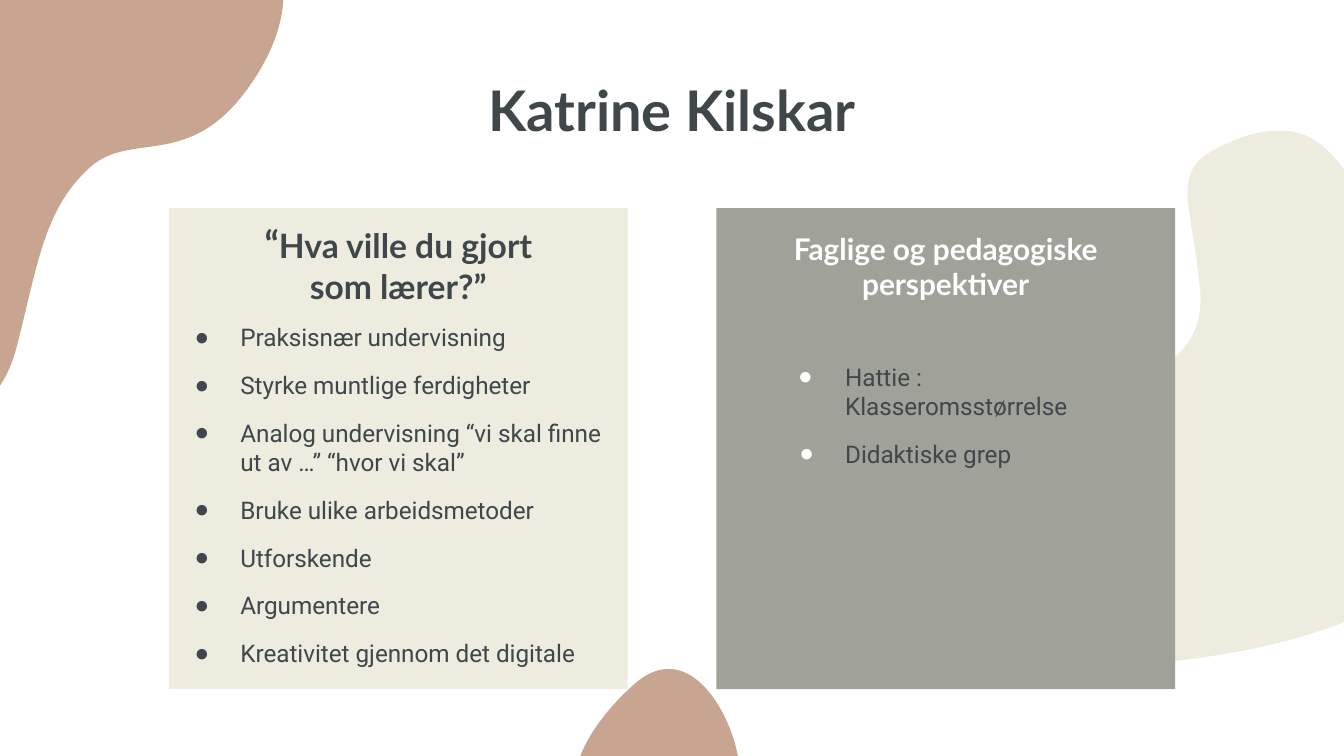
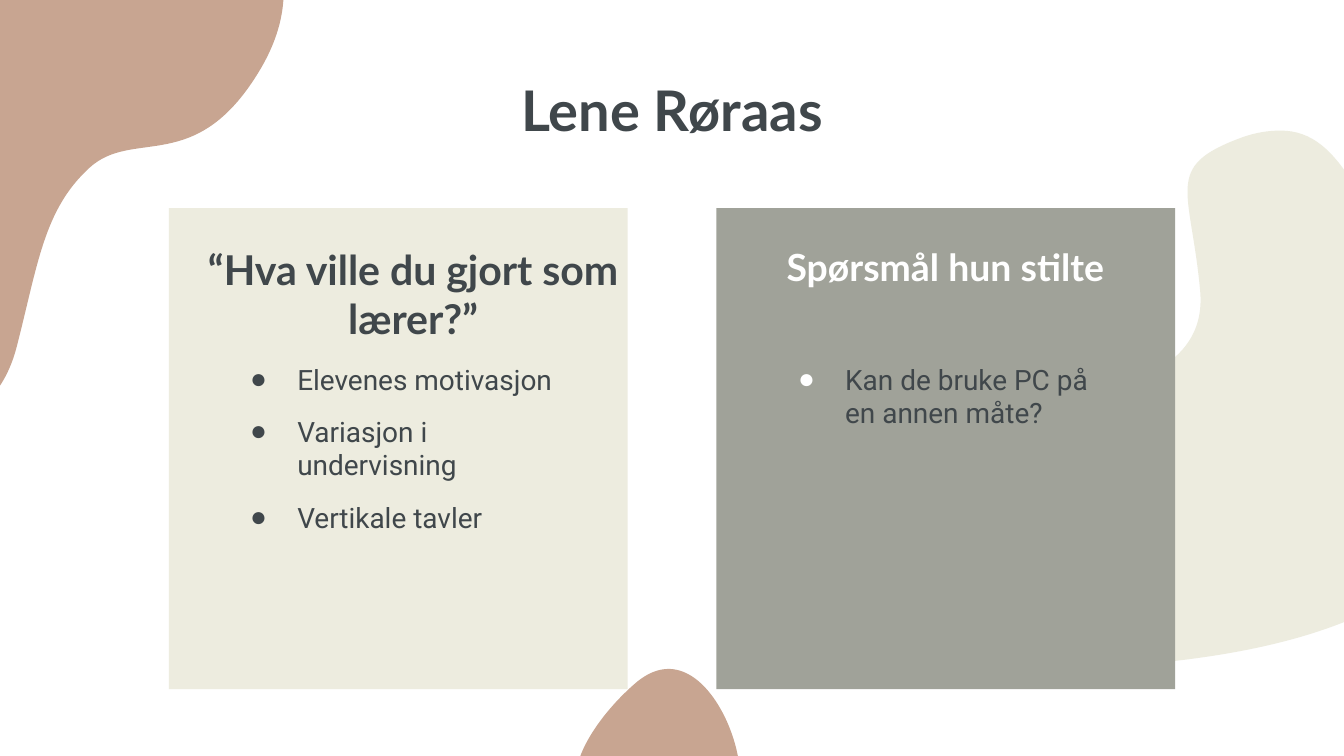
from math import cos, radians, sin

from lxml import etree
from pptx import Presentation
from pptx.dml.color import RGBColor
from pptx.enum.shapes import MSO_SHAPE
from pptx.enum.text import MSO_ANCHOR, PP_ALIGN
from pptx.oxml.ns import qn
from pptx.util import Pt

ROUNDED = MSO_SHAPE.ROUNDED_RECTANGLE
TOP, BOTTOM = MSO_ANCHOR.TOP, MSO_ANCHOR.BOTTOM
LEFT, CENTER = PP_ALIGN.LEFT, PP_ALIGN.CENTER

COLORS = {
    "ink": "40474B",
    "white": "FFFFFF",
    "clay": "C8A591",
    "cream": "EDECDF",
    "stone": "A0A299",
}
HEADING_FONT, BODY_FONT, BULLET_FONT = "Lato", "Roboto", "Arial"
UNITS_PER_POINT = 100

BLOBS = [
    ("clay", 92.9, (22, 69.8), [
        (108.5, -77),
        (134.5, -57.5), (173.5, -16.5), (139, 39.5),
        (105, 95), (72, 69), (48.5, 90.5),
        (24, 113), (21, 142), (9.5, 186.5),
        (-2, 231), (-43, 241), (-72.5, 201.5),
        (-102, 162), (-124.5, 80.5), (-91.5, 42.5),
        (-58.5, 4.5), (-21.5, -44), (-1.5, -75),
        (18, -105), (82, -96.5), (108.5, -77),
    ]),
    ("cream", 0, (608, 215), [
        (686, 70),
        (679.5, 70), (672.5, 71), (664.5, 74),
        (623, 89.5), (638, 101), (643, 156),
        (651, 247.5), (430.5, 193.5), (405.5, 291),
        (391.5, 342.5), (423.5, 360.5), (511, 360.5),
        (537, 360.5), (568, 358.5), (604, 356.5),
        (762, 345), (823.5, 285), (773.5, 191),
        (731, 111), (719.5, 70), (686, 70),
    ]),
    ("clay", 227, (359.6, 412.9), [
        (312, 427),
        (322, 440.5), (348.5, 461), (378.5, 448),
        (408, 434), (395.5, 395), (386.5, 379.5),
        (377.5, 363.5), (360.5, 348), (340, 366.5),
        (319, 385), (301.5, 413), (312, 427),
    ]),
]
CARDS = [("stone", 383.8), ("cream", 90.5)]

SLIDES = [
    {
        "title": "Katrine Kilskar",
        "body_size": 13,
        "lists": [
            ("ink", (85.7, 165.5, 255.6, 195.1), [24.5] * 7, 0, [
                "Praksisnær undervisning",
                "Styrke muntlige ferdigheter",
                "Analog undervisning “vi skal finne ut av …” “hvor vi skal”",
                "Bruke ulike arbeidsmetoder",
                "Utforskende",
                "Argumentere",
                "Kreativitet gjennom det digitale",
            ]),
            ("white", (409.7, 186.8, 194.4, 146.2), [25.2, 24.5], 0, [
                "Hattie : Klasseromsstørrelse",
                "Didaktiske grep",
            ]),
        ],
        "headings": [
            ("ink", (116.2, 111.3, 194.4, 38.2),
             [("“", 20), ("Hva ville du gjort som lærer?”", 18)]),
            ("white", (409.5, 116.2, 194.4, 38.2),
             [("Faglige og pedagogiske perspektiver", 16)]),
        ],
    },
    {
        "title": "Lene Røraas",
        "body_size": 15,
        "lists": [
            ("ink", (116.2, 186.8, 194.4, 146.2), [25.2] * 3, 10, [
                "Elevenes motivasjon",
                "Variasjon i undervisning",
                "Vertikale tavler",
            ]),
            ("white", (409.7, 186.8, 194.4, 146.2), [25.2], 10, [
                "Kan de bruke PC på en annen måte?",
            ]),
        ],
        "headings": [
            ("ink", (98.6, 123.8, 245.5, 38.2),
             [("“Hva ville du gjort som lærer?”", 22)]),
            ("white", (379.4, 123.8, 254.2, 38.2),
             [("Spørsmål hun stilte", 20)]),
        ],
    },
]


def paint(shape, color):
    shape.shadow.inherit = False
    shape.fill.solid()
    shape.fill.fore_color.rgb = RGBColor.from_string(COLORS[color])
    shape.line.fill.background()


def add_text(page, frame, paragraphs, font=HEADING_FONT, color="ink", bold=True,
             align=CENTER, anchor=TOP, bullet=None, hanging=(), after=0):
    box = page.shapes.add_textbox(*map(Pt, frame))
    text = box.text_frame
    text.word_wrap = True
    text.vertical_anchor = anchor
    text.margin_left = text.margin_right = Pt(7.2)
    text.margin_top = text.margin_bottom = Pt(7.2)
    for index, spans in enumerate(paragraphs):
        para = text.add_paragraph() if index else text.paragraphs[0]
        para.alignment = align
        para.space_before = Pt(10 if index else 0)
        para.space_after = Pt(after if index == len(paragraphs) - 1 else 0)
        for words, size in spans:
            span = para.add_run()
            span.text = words
            span.font.name = font
            span.font.size = Pt(size)
            span.font.bold = bold
            span.font.color.rgb = RGBColor.from_string(COLORS[color])
        if bullet:
            props = para._p.get_or_add_pPr()
            props.set("marL", str(Pt(36)))
            props.set("indent", str(-Pt(hanging[index])))
            tint = etree.SubElement(props, qn("a:buClr"))
            etree.SubElement(tint, qn("a:srgbClr"), val=COLORS[bullet])
            etree.SubElement(props, qn("a:buFont"), typeface=BULLET_FONT)
            etree.SubElement(props, qn("a:buChar"), char="●")


deck = Presentation()
deck.slide_width, deck.slide_height = Pt(720), Pt(405)

for content in SLIDES:
    page = deck.slides.add_slide(deck.slide_layouts[6])

    for color, angle, (middle_x, middle_y), points in BLOBS:
        cosine, sine = cos(radians(angle)), sin(radians(angle))
        upright = []
        for x, y in points:
            across, down = x - middle_x, y - middle_y
            upright.append((UNITS_PER_POINT * (middle_x + across * cosine + down * sine),
                            UNITS_PER_POINT * (middle_y - across * sine + down * cosine)))
        builder = page.shapes.build_freeform(*upright[0], scale=Pt(1) / UNITS_PER_POINT)
        builder.add_line_segments(upright[1:], close=True)
        blob = builder.convert_to_shape()
        blob.rotation = angle
        paint(blob, color)
        corners = list(blob._element.iter(qn("a:lnTo")))
        for first in range(0, len(corners), 3):
            curve = etree.Element(qn("a:cubicBezTo"))
            corners[first].addprevious(curve)
            for corner in corners[first:first + 3]:
                curve.append(corner[0])
                corner.getparent().remove(corner)

    add_text(page, (56.2, 41, 607.7, 42.5), [[(content["title"], 30)]], anchor=BOTTOM)

    for color, left in CARDS:
        card = page.shapes.add_shape(ROUNDED, Pt(left), Pt(111.5), Pt(245.7), Pt(257.7))
        card.adjustments[0] = 0
        paint(card, color)

    for bullet, frame, hanging, after, items in content["lists"]:
        add_text(page, frame, [[(item, content["body_size"])] for item in items],
                 font=BODY_FONT, bold=False, align=LEFT, bullet=bullet,
                 hanging=hanging, after=after)

    for color, frame, spans in content["headings"]:
        add_text(page, frame, [spans], color=color)

deck.save("out.pptx")
